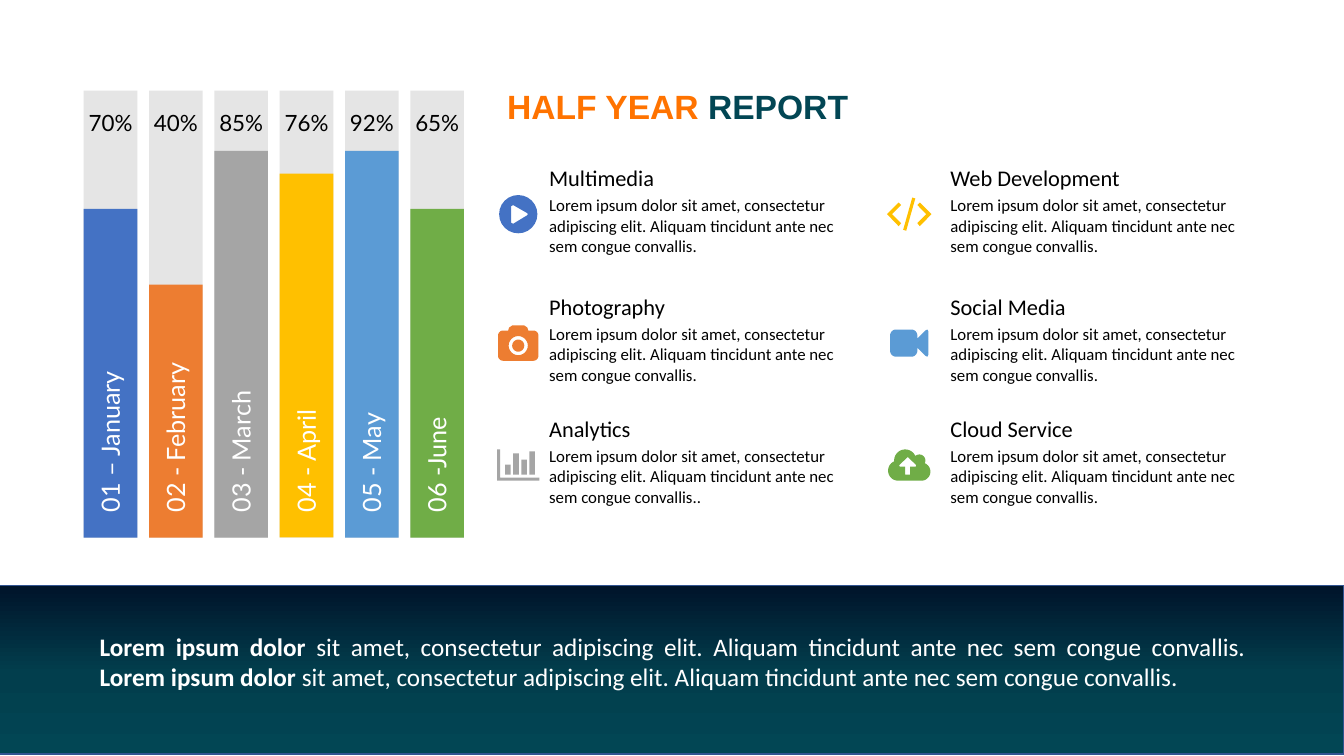
from copy import deepcopy
from math import cos, radians, sin

from pptx import Presentation
from pptx import util as u
from pptx.dml.color import RGBColor
from pptx.enum import shapes, text
from pptx.oxml.ns import qn

WHITE = RGBColor(0xFF, 0xFF, 0xFF)
BLACK = RGBColor(0x00, 0x00, 0x00)
TRACK = RGBColor(0xE5, 0xE5, 0xE5)
BLUE = RGBColor(0x44, 0x72, 0xC4)
ORANGE = RGBColor(0xED, 0x7D, 0x31)
GRAY = RGBColor(0xA5, 0xA5, 0xA5)
YELLOW = RGBColor(0xFF, 0xC0, 0x00)
SKY = RGBColor(0x5B, 0x9B, 0xD5)
GREEN = RGBColor(0x70, 0xAD, 0x47)
TITLE_ORANGE = RGBColor(0xFF, 0x73, 0x00)
TITLE_TEAL = RGBColor(0x02, 0x46, 0x54)
BAND_LINE = RGBColor(0x32, 0x54, 0x91)
BAND_STOPS = [(0, RGBColor(0x00, 0x14, 0x2A)), (0.52, RGBColor(0x02, 0x3E, 0x4D)),
              (1, TITLE_TEAL)]

# Month label, percentage, filled height in points, colour
MONTHS = [
    ("01 – January", "70%", 234.7, BLUE),
    ("02 - February", "40%", 180.7, ORANGE),
    ("03 - March", "85%", 276.2, GRAY),
    ("04 - April", "76%", 260, YELLOW),
    ("05 - May", "92%", 276.2, SKY),
    ("06 -June", "65%", 234.7, GREEN),
]
LOREM = "sit amet, consectetur adipiscing elit. Aliquam tincidunt ante nec sem congue convallis."
ICON_UNIT = 0.72  # points per unit of the icon outlines


def arc(x, y, radius, start, end):
    """Points clockwise along an arc, in degrees from the right."""
    steps = 24
    angles = [radians(start + (end - start) * i / steps) for i in range(steps + 1)]
    return [(x + radius * cos(a), y + radius * sin(a)) for a in angles]


def box_outline(left, top, right, bottom):
    return [(left, top), (right, top), (right, bottom), (left, bottom)]


CHEVRON = [(0, 16.5), (11.5, 5), (14, 7.5), (5, 16.5), (14, 25.5), (11.5, 28.5)]
PLAY = [arc(19, 19, 19, 0, 360),
        [(12, 11), (14, 10), (28, 18), (28.5, 19), (28, 20), (14, 28.5), (12, 27.5)]]
CAMERA = [
    arc(5, 30, 5, 90, 180) + arc(5, 10, 5, 180, 270)
    + [(10, 5), (11, 2), (14, 0), (26, 0), (29, 2), (30, 5)]
    + arc(35, 10, 5, 270, 360) + arc(35, 30, 5, 0, 90),
    arc(20, 20, 9.5, 0, 360), arc(20, 20, 6, 0, 360)]
BAR_ICON = [[(0, 0), (3, 0), (3, 28), (42, 28), (42, 31), (0, 31)]] + [
    box_outline(8 + 8 * i, top, 13.5 + 8 * i, 25) for i, top in enumerate((15, 4, 10, 2))]
CODE = [CHEVRON, [(16, 32), (25, 0), (28, 1), (19, 33)], [(44 - x, y) for x, y in CHEVRON]]
VIDEO = [
    arc(6, 21, 6, 90, 180) + arc(6, 6, 6, 180, 270) + arc(21, 6, 6, 270, 360)
    + [(27, 9), (35, 1), (37, 0), (38, 2), (38, 25), (37, 27), (35, 26), (27, 18)]
    + arc(21, 21, 6, 0, 90)]
CLOUD = [
    arc(10, 21, 10, 90, 246) + arc(17, 11, 11, 180, 338)
    + arc(31, 11, 6, 225, 390) + arc(33, 22, 9, 290, 450),
    [(19.5, 7.5), (28, 15.5), (27.5, 17), (22, 17), (22, 25),
     (17, 25), (17, 17), (11.5, 17), (11, 15.5)]]

# Text left and distance from it to the icon centre, then heading, ending, icon, colour
COLUMNS = [
    (385.2, 15, [("Multimedia", "", PLAY, BLUE), ("Photography", "", CAMERA, ORANGE),
                 ("Analytics", ".", BAR_ICON, GRAY)]),
    (671.8, 22.3, [("Web Development", "", CODE, YELLOW), ("Social Media", "", VIDEO, SKY),
                   ("Cloud Service", "", CLOUD, GREEN)]),
]
ROW_TOPS = (113.8, 205.9, 293)


def format_run(run, font, size, color, bold=False):
    run.font.name = font
    run.font.size = u.Pt(size)
    run.font.bold = bold
    run.font.color.rgb = color


def add_rectangle(slide, left, top, width, height):
    shape = slide.shapes.add_shape(shapes.MSO_SHAPE.RECTANGLE, u.Pt(left), u.Pt(top),
                                   u.Pt(width), u.Pt(height))
    shape.shadow.inherit = False
    return shape


def add_bar(slide, left, top, width, height, color):
    bar = add_rectangle(slide, left, top, width, height)
    bar.fill.solid()
    bar.fill.fore_color.rgb = color
    bar.line.fill.background()


def add_text(slide, left, top, width, height, runs, font, size, color, align=None):
    """Text box from (wording, bold) pairs."""
    box = slide.shapes.add_textbox(u.Pt(left), u.Pt(top), u.Pt(width), u.Pt(height))
    box.text_frame.word_wrap = True
    paragraph = box.text_frame.paragraphs[0]
    paragraph.alignment = align
    for wording, bold in runs:
        run = paragraph.add_run()
        run.text = wording
        format_run(run, font, size, color, bold)
    return box


def add_bar_text(slide, center_x, center_y, width, height, wording, size, color, align=None):
    box = add_text(slide, center_x - width / 2, center_y - height / 2, width, height,
                   [(wording, False)], "Lato", size, color, align)
    frame = box.text_frame
    frame.vertical_anchor = text.MSO_ANCHOR.MIDDLE
    frame.margin_left = frame.margin_right = u.Pt(9.4)
    frame.margin_top = frame.margin_bottom = 0
    return box


def add_icon(slide, center_x, center_y, outlines, color):
    precision = 100
    factor = ICON_UNIT * precision
    scaled = [[(x * factor, y * factor) for x, y in outline] for outline in outlines]
    width, height = (max(p[axis] for o in scaled for p in o) / precision for axis in (0, 1))
    builder = slide.shapes.build_freeform(*scaled[0][0], scale=u.Pt(1) / precision)
    for index, outline in enumerate(scaled):
        if index:
            builder.move_to(*outline[0])
        builder.add_line_segments(outline[1:], close=True)
    icon = builder.convert_to_shape(u.Pt(center_x - width / 2), u.Pt(center_y - height / 2))
    icon.shadow.inherit = False
    icon.fill.solid()
    icon.fill.fore_color.rgb = color
    icon.line.fill.background()


def add_month_bars(slide, left, top, width, height):
    bar_width = 38.3
    pitch = (width - bar_width) / (len(MONTHS) - 1)
    label_length = 252
    for index, (month, percent, filled, color) in enumerate(MONTHS):
        x = left + index * pitch
        center = x + bar_width / 2
        add_bar(slide, x, top, bar_width, height, TRACK)
        add_bar(slide, x, top + height - filled, bar_width, filled, color)
        label = add_bar_text(slide, center - 0.5, top + height - 8.5 - label_length / 2,
                             label_length, 21.6, month, 18, WHITE)
        label.rotation = 270
        add_bar_text(slide, center, top + 22.7, 56.2, 19.4, percent, 16, BLACK,
                     text.PP_ALIGN.CENTER)


def add_service(slide, left, top, icon_gap, heading, ending, icon, color):
    add_icon(slide, left - icon_gap, top + 39.2, icon, color)
    add_text(slide, left, top, 235.4, 26.6, [(heading, False)], "Calibri", 16, BLACK)
    add_text(slide, left, top + 22, 226, 51, [("Lorem ipsum dolor " + LOREM + ending, False)],
             "Calibri", 12, BLACK)


def add_title(slide, left, top, width, height):
    title = slide.shapes.title
    title.left, title.top, title.width, title.height = map(u.Pt, (left, top, width, height))
    frame = title.text_frame
    frame.auto_size = text.MSO_AUTO_SIZE.NONE
    frame.vertical_anchor = text.MSO_ANCHOR.TOP
    paragraph = frame.paragraphs[0]
    paragraph.alignment = text.PP_ALIGN.LEFT
    for wording, color in (("HALF YEAR ", TITLE_ORANGE), ("REPORT", TITLE_TEAL)):
        run = paragraph.add_run()
        run.text = wording
        format_run(run, "Arial", 24, color, True)


def add_footer_band(slide, left, top, width, height):
    band = add_rectangle(slide, left, top, width, height)
    band.fill.gradient()
    band.fill.gradient_angle = 270
    stop_list = band.element.spPr.find(".//" + qn("a:gsLst"))
    stop_list.append(deepcopy(stop_list[1]))  # third colour stop
    for stop, (position, color) in zip(band.fill.gradient_stops, BAND_STOPS):
        stop.position = position
        stop.color.rgb = color
    band.line.color.rgb = BAND_LINE
    band.line.width = u.Pt(1)
    sentence = [("Lorem ipsum dolor ", True), (LOREM + " ", False)]
    add_text(slide, left + 65.5, top + 28.8, 833, 51, sentence * 2, "Calibri", 18, WHITE,
             text.PP_ALIGN.JUSTIFY)


def main():
    presentation = Presentation()
    presentation.slide_width, presentation.slide_height = u.Pt(960), u.Pt(540)
    slide = presentation.slides.add_slide(presentation.slide_layouts[5])
    add_month_bars(slide, 59.8, 64.8, 271.6, 319.2)
    for left, icon_gap, services in COLUMNS:
        for top, service in zip(ROW_TOPS, services):
            add_service(slide, left, top, icon_gap, *service)
    add_title(slide, 355, 57.6, 513.4, 36)
    add_footer_band(slide, -1.4, 418.3, 961.4, 120.2)
    presentation.save("out.pptx")


if __name__ == "__main__":
    main()
